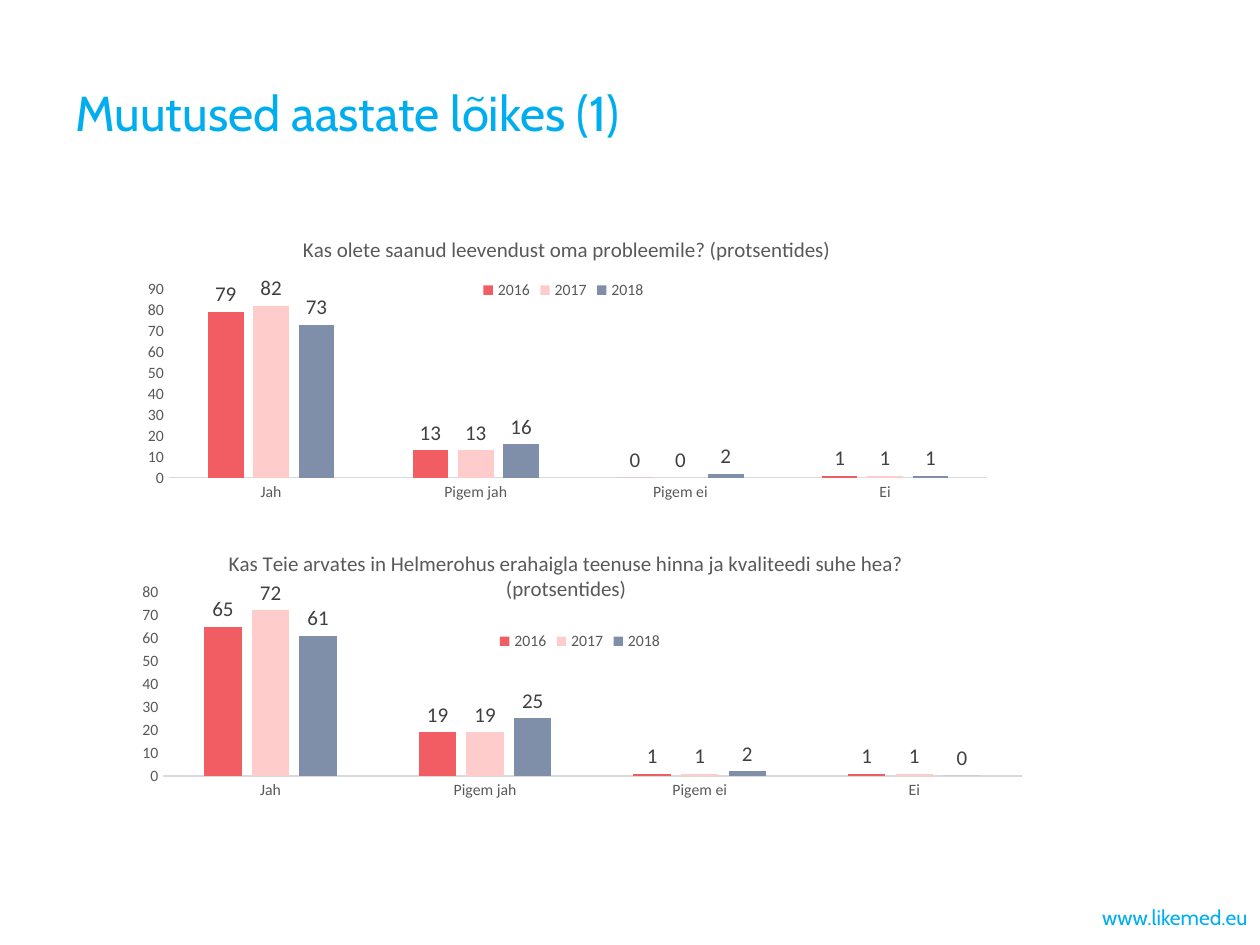
from lxml import etree
from pptx import Presentation, util as u
from pptx.chart.data import CategoryChartData
from pptx.dml.color import RGBColor
from pptx.enum import chart as ch, text
from pptx.oxml.ns import qn

PX = 914400 / 126
CYAN, GREY, DARK, AXIS = "00AEEF", "595959", "404040", "D9D9D9"
ANSWERS = ["Jah", "Pigem jah", "Pigem ei", "Ei"]
YEAR_COLORS = {"2016": "F25C63", "2017": "FFCCCC", "2018": "7F8FA9"}


def px(*lengths):
    return [u.Emu(round(n * PX)) for n in lengths]


def rgb(value):
    return RGBColor.from_string(value)


def style(font, size, color, name="Calibri"):
    font.name, font.size, font.bold = name, u.Pt(size), False
    font.color.rgb = rgb(color)


def place(element, index, frame, box, inner=False):
    """Pin a chart part to a px frame (x, y and optionally w, h) inside the chart box."""
    for old in element.findall(qn("c:layout")):
        element.remove(old)
    layout = etree.Element(qn("c:layout"))
    manual = etree.SubElement(layout, qn("c:manualLayout"))
    settings = [("layoutTarget", "inner")] if inner else []
    settings += [("xMode", "edge"), ("yMode", "edge")]
    settings += [(key, f"{length / whole:.3f}")
                 for key, length, whole in zip("xywh", frame, box[2:] * 2)]
    for tag, value in settings:
        etree.SubElement(manual, qn(f"c:{tag}")).set("val", value)
    element.insert(index, layout)


def add_heading(slide, box, words):
    title = slide.shapes.title
    title.left, title.top, title.width, title.height = px(*box)
    frame = title.text_frame
    frame.text = words
    frame.vertical_anchor = text.MSO_ANCHOR.MIDDLE
    heading = frame.paragraphs[0]
    heading.alignment = text.PP_ALIGN.LEFT
    style(heading.font, 28, CYAN, "Cabin")


def add_footer(slide, box, words):
    frame = slide.shapes.add_textbox(*px(*box)).text_frame
    frame.word_wrap = True
    frame.vertical_anchor = text.MSO_ANCHOR.MIDDLE
    address = frame.paragraphs[0]
    address.text = words
    address.alignment = text.PP_ALIGN.RIGHT
    style(address.font, 12, CYAN, "Cabin")


def format_axes(chart, top):
    answers, percent = chart.category_axis, chart.value_axis
    for axis in (answers, percent):
        axis.major_tick_mark = axis.minor_tick_mark = ch.XL_TICK_MARK.NONE
        axis.has_major_gridlines = False
        style(axis.tick_labels.font, 9, GREY)
    answers.format.line.color.rgb = rgb(AXIS)
    answers.format.line.width = u.Pt(0.75)
    percent.format.line.fill.background()
    percent.minimum_scale, percent.maximum_scale = 0, top
    percent.major_unit = 10


def add_survey_chart(slide, box, question, results, top, title_at, legend_at, plot_box):
    data = CategoryChartData()
    data.categories = ANSWERS
    for year, values in zip(YEAR_COLORS, results):
        data.add_series(year, values)
    chart = slide.shapes.add_chart(
        ch.XL_CHART_TYPE.COLUMN_CLUSTERED, *px(*box), data).chart
    style(chart.font, 10, "000000")
    format_axes(chart, top)

    chart.has_title = True
    title = chart.chart_title
    title.text_frame.text = question
    style(title.text_frame.paragraphs[0].font, 12, GREY)
    title.include_in_layout = False
    place(title._element, 1, title_at, box)

    chart.has_legend = True
    legend = chart.legend
    legend.position = ch.XL_LEGEND_POSITION.TOP
    legend.include_in_layout = False
    style(legend.font, 9, GREY)
    place(legend._element, 1, legend_at, box)

    plot = chart.plots[0]
    plot.gap_width, plot.overlap = 219, -27
    plot.vary_by_categories = False
    for series, color in zip(plot.series, YEAR_COLORS.values()):
        series.format.fill.solid()
        series.format.fill.fore_color.rgb = rgb(color)
        labels = series.data_labels
        labels.show_value = True
        labels.position = ch.XL_LABEL_POSITION.OUTSIDE_END
        style(labels.font, 12, DARK)
    place(chart._chartSpace.chart.plotArea, 0, plot_box, box, inner=True)


def main():
    deck = Presentation()
    deck.slide_width, deck.slide_height = px(1260, 945)
    slide = deck.slides.add_slide(deck.slide_layouts[0])
    subtitle = slide.placeholders[1].element
    subtitle.getparent().remove(subtitle)

    add_heading(slide, (63, 10, 1134, 203), "Muutused aastate lõikes (1)")
    add_footer(slide, (861, 892, 399, 50), "www.likemed.eu")
    add_survey_chart(
        slide, (120, 213, 887, 300),
        "Kas olete saanud leevendust oma probleemile? (protsentides)",
        [(79, 13, 0, 1), (82, 13, 0, 1), (73, 16, 2, 1)], 90,
        title_at=(179, 19), legend_at=(358, 63), plot_box=(49, 76, 819, 189))
    add_survey_chart(
        slide, (120, 539, 921, 278),
        "Kas Teie arvates in Helmerohus erahaigla teenuse hinna ja kvaliteedi "
        "suhe hea? (protsentides)",
        [(65, 19, 1, 1), (72, 19, 1, 1), (61, 25, 2, 0)], 80,
        title_at=(105, 7), legend_at=(375, 88), plot_box=(43, 53, 858, 184))
    deck.save("out.pptx")


if __name__ == "__main__":
    main()
